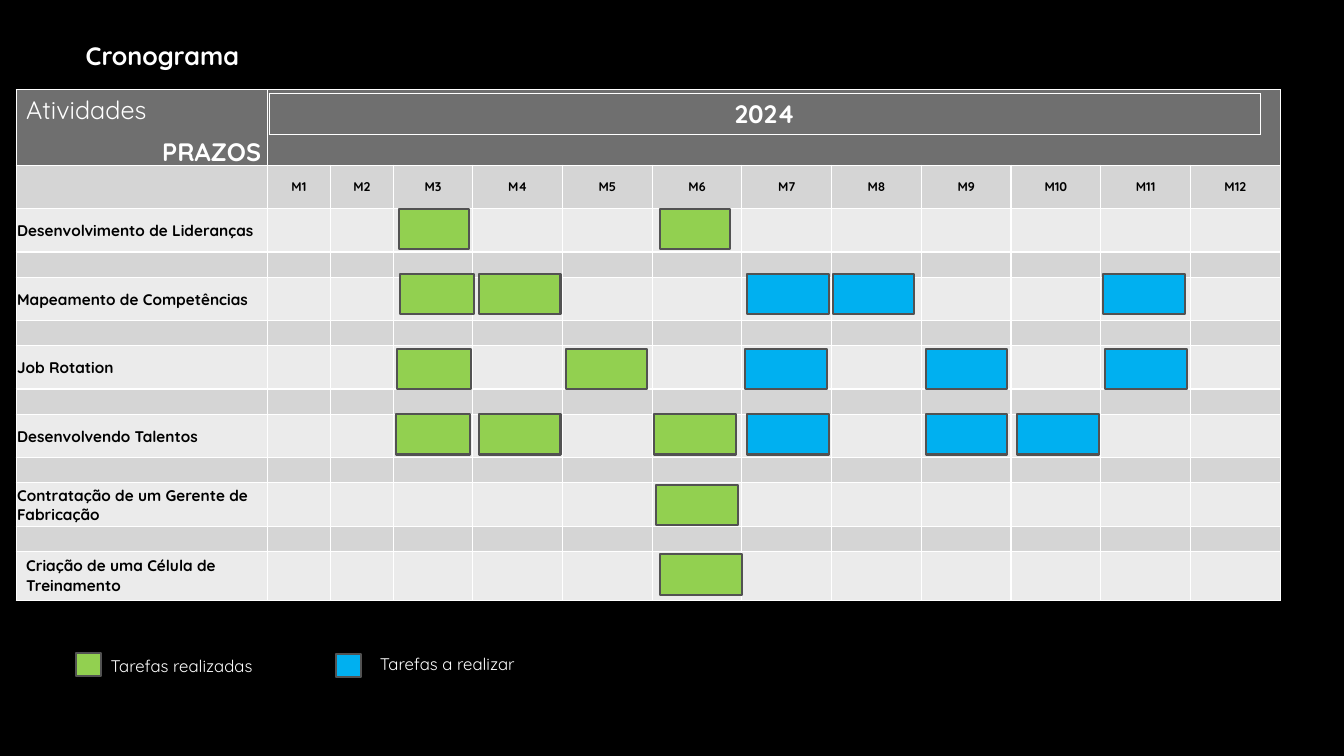
from lxml.etree import SubElement
from pptx import Presentation
from pptx.dml.color import RGBColor
from pptx.enum.shapes import MSO_SHAPE
from pptx.enum.text import MSO_ANCHOR, PP_ALIGN
from pptx.oxml.ns import qn
from pptx.util import Inches, Pt

BLACK = RGBColor(0x00, 0x00, 0x00)
WHITE = RGBColor(0xFF, 0xFF, 0xFF)
HEADER = RGBColor(0x6F, 0x6F, 0x6F)
BAND = RGBColor(0xD5, 0xD5, 0xD5)
ROW = RGBColor(0xEB, 0xEB, 0xEB)
OUTLINE = RGBColor(0x52, 0x52, 0x52)
DONE = RGBColor(0x92, 0xD0, 0x50)
PENDING = RGBColor(0x00, 0xB0, 0xF0)

FONT = "Quicksand"
FIRST_PENDING_MONTH = 7
COLUMNS = [2.49, 0.63, 0.62, 0.79] + [0.89] * 9
ROWS = [0.75, 0.43] + [0.43, 0.25] * 5 + [0.47]

# Each activity: name, vertical nudge, bars as (month, nudge, width)
ACTIVITIES = [
    ("Desenvolvimento de Lideranças", 0, [(3, 0.06, 0.69), (6, 0.08, 0.69)]),
    ("Mapeamento de Competências", -0.03,
     [(3, 0.07, 0.73), (4, 0.06, 0.81), (7, 0.05, 0.81), (8, 0.01, 0.81), (11, 0.02, 0.81)]),
    ("Job Rotation", 0.03,
     [(3, 0.04, 0.73), (5, 0.03, 0.81), (7, 0.03, 0.81), (9, 0.04, 0.81), (11, 0.04, 0.81)]),
    ("Desenvolvendo Talentos", 0,
     [(3, 0.03, 0.73), (4, 0.06, 0.81), (6, 0.02, 0.81), (7, 0.05, 0.81),
      (9, 0.04, 0.81), (10, 0.06, 0.81)]),
    ("Contratação de um Gerente de Fabricação", 0.02, [(6, 0.04, 0.81)]),
    ("Criação de uma Célula de Treinamento", 0.03, [(6, 0.08, 0.81)]),
]


def write(frame, text, size=18, color=WHITE, bold=False, align=PP_ALIGN.LEFT):
    para = frame.paragraphs[0]
    para.alignment = align
    span = para.add_run()
    span.text = text
    span.font.name = FONT
    span.font.size = Pt(size)
    span.font.bold = bold
    span.font.color.rgb = color


def add_label(page, left, top, width, height, text, **style):
    box = page.shapes.add_textbox(Inches(left), Inches(top), Inches(width), Inches(height))
    box.text_frame.word_wrap = True
    write(box.text_frame, text, **style)


def add_block(page, left, top, width, height, color):
    block = page.shapes.add_shape(
        MSO_SHAPE.RECTANGLE, Inches(left), Inches(top), Inches(width), Inches(height))
    block.shadow.inherit = False
    block.fill.solid()
    block.fill.fore_color.rgb = color
    block.line.color.rgb = OUTLINE
    block.line.width = Pt(1.5)


def add_grid(page, left, top, columns, rows):
    frame = page.shapes.add_table(
        len(rows), len(columns), Inches(left), Inches(top),
        Inches(sum(columns)), Inches(sum(rows)))
    table = frame.table
    table.first_row = False
    table.horz_banding = False
    for column, width in zip(table.columns, columns):
        column.width = Inches(width)
    for row, height in zip(table.rows, rows):
        row.height = Inches(height)
    return table


def style_cell(cell, fill=None):
    if fill is None:
        cell.fill.background()
    else:
        cell.fill.solid()
        cell.fill.fore_color.rgb = fill
    properties = cell._tc.get_or_add_tcPr()
    for index, side in enumerate(("a:lnL", "a:lnR", "a:lnT", "a:lnB")):
        line = SubElement(properties, qn(side), w=str(Pt(1)))
        paint = SubElement(line, qn("a:solidFill"))
        SubElement(paint, qn("a:srgbClr"), val=str(WHITE))
        properties.insert(index, line)
    cell.text_frame.paragraphs[0]._p.get_or_add_endParaRPr().set("sz", "800")


def add_title(page, left, top, width, height):
    title = page.shapes.title
    title.left, title.top = Inches(left), Inches(top)
    title.width, title.height = Inches(width), Inches(height)
    title.text_frame.vertical_anchor = MSO_ANCHOR.TOP
    write(title.text_frame, "Cronograma", bold=True)


def add_schedule(page, left, top):
    table = add_grid(page, left, top, COLUMNS, ROWS)
    for row in range(len(ROWS)):
        fill = HEADER if row == 0 else BAND if row % 2 else ROW
        for column in range(len(COLUMNS)):
            style_cell(table.cell(row, column), fill)
    table.cell(0, 1).merge(table.cell(0, len(COLUMNS) - 1))
    write(table.cell(0, 0).text_frame, "Atividades")
    for month in range(1, 13):
        cell = table.cell(1, month)
        cell.vertical_anchor = MSO_ANCHOR.MIDDLE
        write(cell.text_frame, f"M{month}", size=9, color=BLACK, bold=True,
              align=PP_ALIGN.CENTER)
    for index, (name, _, _) in enumerate(ACTIVITIES):
        cell = table.cell(2 + 2 * index, 0)
        if index < len(ACTIVITIES) - 1:
            cell.vertical_anchor = MSO_ANCHOR.MIDDLE
            cell.margin_left = cell.margin_right = cell.margin_top = Inches(0.01)
            cell.margin_bottom = 0
        write(cell.text_frame, name, size=11, color=BLACK, bold=True)
    add_label(page, left + 1.35, top + 0.41, 2.81, 0.4, "PRAZOS", bold=True)
    year = add_grid(page, left + 2.51, top + 0.04, [9.83], [0.4]).cell(0, 0)
    style_cell(year)
    write(year.text_frame, "2024", bold=True, align=PP_ALIGN.CENTER)


def add_bars(page, left, top):
    for index, (_, rise, bars) in enumerate(ACTIVITIES):
        bar_top = top + sum(ROWS[:2 + 2 * index]) + rise
        for month, nudge, width in bars:
            color = DONE if month < FIRST_PENDING_MONTH else PENDING
            add_block(page, left + sum(COLUMNS[:month]) + nudge, bar_top, width, 0.4, color)


def add_legend(page, left, top):
    add_block(page, left, top + 0.04, 0.25, 0.23, DONE)
    add_label(page, left + 0.25, top + 0.02, 2.3, 0.3, "Tarefas realizadas", size=12)
    add_block(page, left + 2.58, top + 0.05, 0.25, 0.23, PENDING)
    add_label(page, left + 2.92, top, 3.91, 0.3, "Tarefas a realizar", size=12)


def main():
    deck = Presentation()
    deck.slide_width, deck.slide_height = Inches(13.33), Inches(7.5)
    page = deck.slides.add_slide(deck.slide_layouts[5])
    page.background.fill.solid()
    page.background.fill.fore_color.rgb = BLACK
    add_title(page, 0.75, 0.35, 9.17, 0.4)
    add_schedule(page, 0.16, 0.89)
    add_bars(page, 0.16, 0.89)
    add_legend(page, 0.75, 6.44)
    deck.save("out.pptx")


if __name__ == "__main__":
    main()
